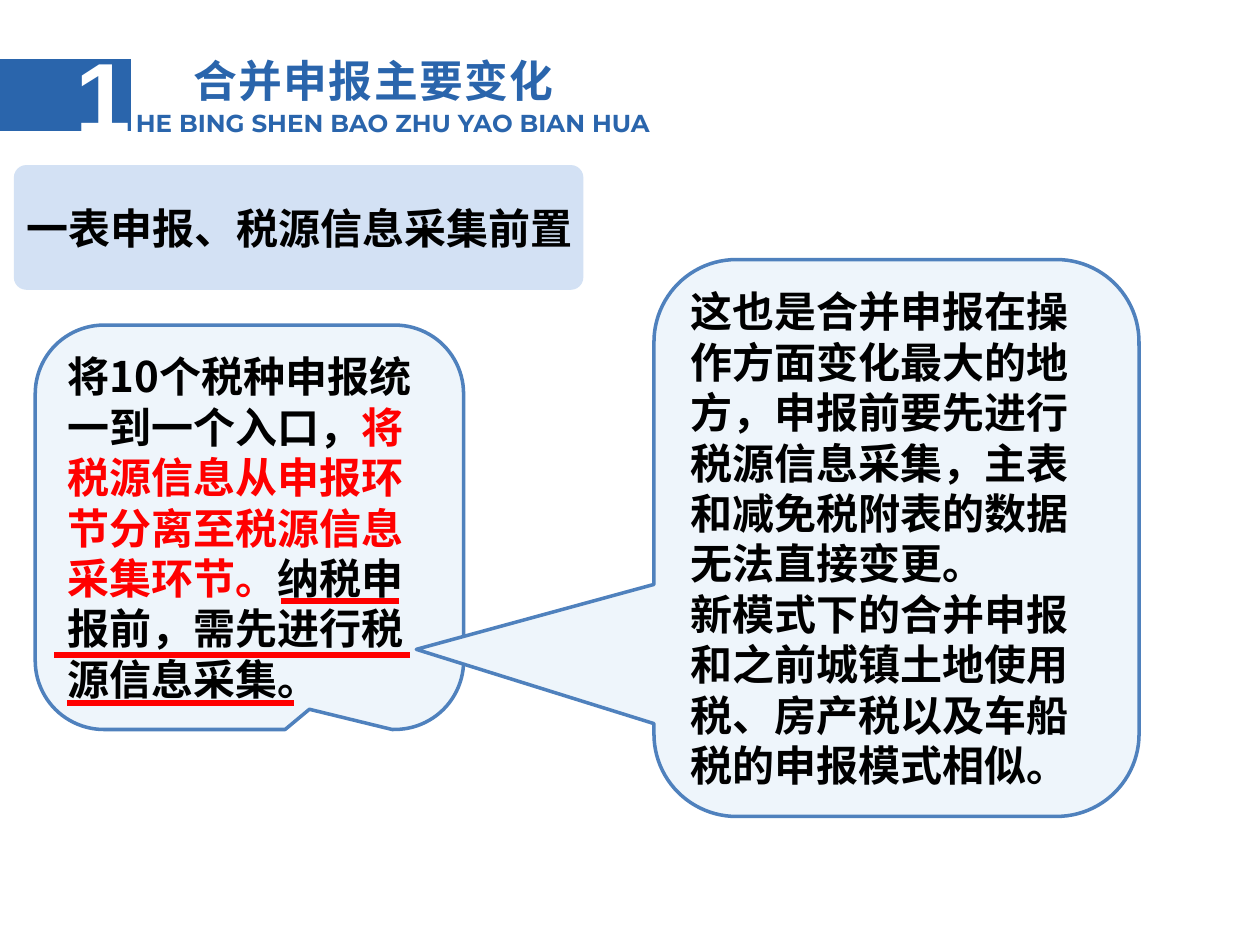
from dataclasses import dataclass

from lxml import etree
from pptx import Presentation
from pptx.dml.color import RGBColor
from pptx.enum.shapes import MSO_CONNECTOR, MSO_SHAPE
from pptx.enum.text import MSO_ANCHOR, MSO_AUTO_SIZE, PP_ALIGN
from pptx.oxml.ns import qn
from pptx.util import Pt

PX = 9144  # 100 px to the inch
RECT = MSO_SHAPE.RECTANGLE
ROUNDED = MSO_SHAPE.ROUNDED_RECTANGLE
CALLOUT = MSO_SHAPE.ROUNDED_RECTANGULAR_CALLOUT
STRAIGHT = MSO_CONNECTOR.STRAIGHT
LEFT = PP_ALIGN.LEFT
MIDDLE = MSO_ANCHOR.MIDDLE
FIT_SHAPE = MSO_AUTO_SIZE.SHAPE_TO_FIT_TEXT


@dataclass(frozen=True)
class Theme:
    blue: RGBColor = RGBColor(0x2A, 0x65, 0xAC)
    outline: RGBColor = RGBColor(0x4F, 0x81, 0xBD)
    bubble: RGBColor = RGBColor(0xEE, 0xF5, 0xFB)
    banner: RGBColor = RGBColor(0x8E, 0xB4, 0xE3)
    red: RGBColor = RGBColor(0xFF, 0, 0)
    black: RGBColor = RGBColor(0, 0, 0)
    white: RGBColor = RGBColor(0xFF, 0xFF, 0xFF)
    chinese: str = "Noto Sans CJK SC"
    digit: str = "Arial"
    pinyin: str = "Montserrat"
    number_size: int = 57
    title_size: int = 25
    body_size: int = 24
    pinyin_size: int = 14


THEME = Theme()


def write(frame, paragraphs, size, color, face=THEME.chinese, spacing=0):
    """Fill a frame with paragraphs, each a list of (text, colour or None) runs."""
    frame.word_wrap = True
    for index, runs in enumerate(paragraphs):
        paragraph = frame.paragraphs[0] if index == 0 else frame.add_paragraph()
        paragraph.alignment = LEFT
        font = paragraph.font
        font.size, font.bold, font.name = Pt(size), True, face
        font.color.rgb = color
        defaults = paragraph._p.pPr.find(qn("a:defRPr"))
        etree.SubElement(defaults, qn("a:ea")).set("typeface", face)
        for text, run_color in runs:
            run = paragraph.add_run()
            run.text = text
            if run_color is not None:
                run.font.color.rgb = run_color
            if spacing:
                run.font._element.set("spc", str(spacing))


def add_panel(preset, box, fill, adjustments=()):
    panel = slide.shapes.add_shape(preset, *(n * PX for n in box))
    panel.shadow.inherit = False
    panel.fill.solid()
    panel.fill.fore_color.rgb = fill
    panel.line.fill.background()
    for index, value in enumerate(adjustments):
        panel.adjustments[index] = value
    return panel


prs = Presentation()
prs.slide_width, prs.slide_height = 1000 * PX, 750 * PX
slide = prs.slides.add_slide(prs.slide_layouts[6])

# Section header and topic banner
add_panel(RECT, (0, 47, 104, 57), THEME.blue)
banner = add_panel(ROUNDED, (11, 131, 452, 99), THEME.banner, [0.1])
banner_color = banner.fill._xPr.find(qn("a:solidFill"))[0]
etree.SubElement(banner_color, qn("a:alpha")).set("val", "39000")

headings = [
    ("合并申报主要变化", (144, 38, 342, 52), THEME.title_size, THEME.blue, THEME.chinese, 80),
    ("1", (50, 22, 59, 106), THEME.number_size, THEME.white, THEME.digit, 0),
    ("HE BING SHEN BAO ZHU YAO BIAN HUA", (98, 81, 492, 34),
     THEME.pinyin_size, THEME.blue, THEME.pinyin, 0),
    ("一表申报、税源信息采集前置", (11, 156, 529, 50),
     THEME.body_size, THEME.black, THEME.chinese, 0),
]
for text, box, size, color, face, spacing in headings:
    frame = slide.shapes.add_textbox(*(n * PX for n in box)).text_frame
    frame.auto_size = FIT_SHAPE
    write(frame, [[(text, None)]], size, color, face, spacing)

# Callouts, with the underlines of the first one beneath the second
entry_text = [[
    ("将10个税种申报统一到一个入口，", None),
    ("将税源信息从申报环节分离至税源信息采集环节。", THEME.red),
    ("纳税申报前，需先进行税源信息采集。", None),
]]
change_text = [
    [("这也是合并申报在操作方面变化最大的地方，申报前要先进行税源信息采集，"
      "主表和减免税附表的数据无法直接变更。", None)],
    [("新模式下的合并申报和之前城镇土地使用税、房产税以及车船税的申报模式相似。", None)],
]
callouts = [
    ((28, 258, 340, 321), (0.14, 0.45, 0.17), entry_text,
     [(223, 317, 477), (43, 325, 520), (53, 233, 558)]),
    ((519, 206, 385, 442), (-0.99, 0.2, 0.17), change_text, []),
]
for box, adjustments, paragraphs, underlines in callouts:
    callout = add_panel(CALLOUT, box, THEME.bubble, adjustments)
    callout.line.color.rgb = THEME.outline
    callout.line.width = Pt(2)
    callout.text_frame.vertical_anchor = MIDDLE
    write(callout.text_frame, paragraphs, THEME.body_size, THEME.black)
    for start, end, y in underlines:
        underline = slide.shapes.add_connector(STRAIGHT, start * PX, y * PX, end * PX, y * PX)
        underline.line.color.rgb = THEME.red
        underline.line.width = Pt(3.5)
        etree.SubElement(underline._element.spPr, qn("a:effectLst"))

prs.save("out.pptx")
